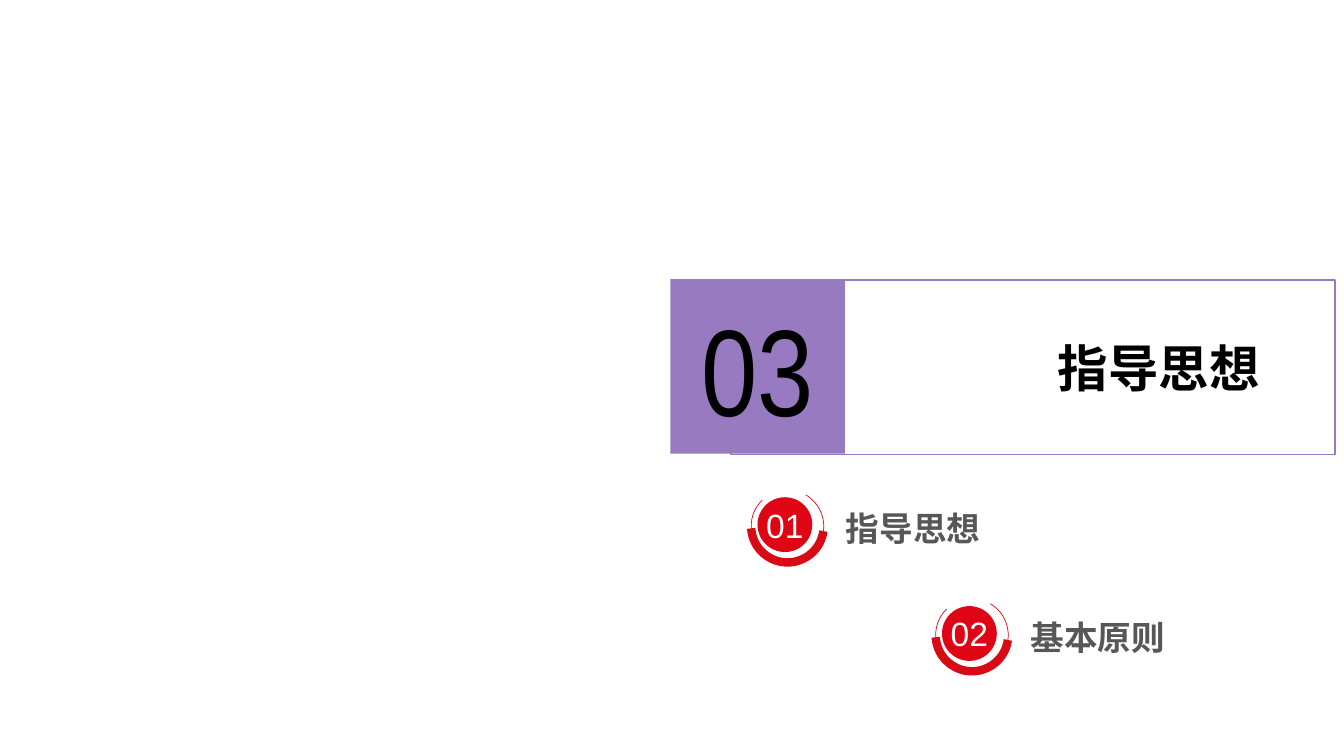
from pptx import Presentation
from pptx.dml.color import RGBColor
from pptx.enum.shapes import MSO_SHAPE as Shape
from pptx.enum.text import MSO_ANCHOR as Anchor, MSO_AUTO_SIZE as AutoSize, PP_ALIGN as Align
from pptx.oxml.ns import qn
from pptx.util import Inches, Pt
from lxml import etree


class Theme:
    purple = RGBColor(0x97, 0x7A, 0xBF)
    red = RGBColor(0xDF, 0x05, 0x15)
    ring = RGBColor(0xD8, 0x0A, 0x16)
    black = RGBColor(0, 0, 0)
    white = RGBColor(0xFF, 0xFF, 0xFF)
    label = (RGBColor(0x57, 0x56, 0x58), RGBColor(0x25, 0x22, 0x23))
    latin, narrow, chinese = "Arial", "Arial Narrow", "Noto Sans CJK SC"
    number_size, title_size, item_size = 88, 36, 24


def add_figure(parent, kind, at, fill=None, line=None, weight=1):
    figure = parent.shapes.add_shape(kind, *map(Inches, at))
    figure.shadow.inherit = False
    if fill is None:
        figure.fill.background()
    else:
        figure.fill.solid()
        figure.fill.fore_color.rgb = fill
    if line is None:
        figure.line.fill.background()
    else:
        figure.line.color.rgb = line
        figure.line.width = Pt(weight)
    return figure


def write(box, text, size, font, color, bold=False, align=Align.LEFT,
          anchor=Anchor.TOP, insets=(0.1, 0.05), wrap=True, grow=True):
    """Fill a box with one line of text; a pair of colours makes a gradient."""
    frame = box.text_frame
    frame.word_wrap = wrap
    frame.auto_size = AutoSize.SHAPE_TO_FIT_TEXT if grow else AutoSize.NONE
    frame.vertical_anchor = anchor
    frame.margin_left = frame.margin_right = Inches(insets[0])
    frame.margin_top = frame.margin_bottom = Inches(insets[1])
    para = frame.paragraphs[0]
    para.alignment = align
    span = para.add_run()
    span.text = text
    span.font.size, span.font.bold, span.font.name = Pt(size), bold, font
    if isinstance(color, RGBColor):
        span.font.color.rgb = color
    else:
        span.font.fill.gradient()
        span.font.fill.gradient_angle = 240
        for stop, shade in zip(span.font.fill.gradient_stops, color):
            stop.color.rgb = shade
    latin = span.font._element.find(qn("a:latin"))
    east_asian = etree.Element(qn("a:ea"), typeface=font)
    latin.addnext(east_asian)


deck = Presentation()
deck.slide_width, deck.slide_height = Inches(13.33), Inches(7.5)
page = deck.slides.add_slide(deck.slide_layouts[6])

# Section banner
banner = page.shapes.add_group_shape()
add_figure(banner, Shape.RECTANGLE, (6.65, 2.77, 1.73, 1.73), fill=Theme.purple)
add_figure(banner, Shape.RECTANGLE, (7.25, 2.78, 5.99, 1.73), line=Theme.purple)
number = banner.shapes.add_textbox(*map(Inches, (6.65, 2.85, 1.73, 1.58)))
write(number, "03", Theme.number_size, Theme.narrow, Theme.black,
      align=Align.CENTER, anchor=Anchor.MIDDLE)
title = banner.shapes.add_textbox(*map(Inches, (9.76, 3.29, 2.83, 1.31)))
write(title, "指导思想", Theme.title_size, Theme.chinese, Theme.black,
      bold=True, align=Align.RIGHT)

# Numbered items, each placed from the corner of its ring
items = [("01", "指导思想", 7.45, 4.86), ("02", "基本原则", 9.28, 5.94)]
ring_arcs = [(34.06, 205.29, 0.5), (74.49, 175.71, 6)]

for item_number, item_text, left, top in items:
    item = page.shapes.add_group_shape()
    label = item.shapes.add_textbox(*map(Inches, (left + 0.87, top + 0.15, 1.58, 0.47)))
    write(label, item_text, Theme.item_size, Theme.chinese, Theme.label,
          bold=True, insets=(0.07, 0.03))
    disc = add_figure(item, Shape.OVAL, (left + 0.07, top + 0.08, 0.53, 0.53),
                      fill=Theme.red, line=Theme.ring)
    write(disc, item_number, Theme.item_size, Theme.latin, Theme.white,
          align=Align.CENTER, anchor=Anchor.MIDDLE, wrap=False, grow=False)
    for start, end, weight in ring_arcs:
        arc = add_figure(item, Shape.ARC, (left, top, 0.72, 0.72),
                         line=Theme.ring, weight=weight)
        arc.adjustments[0], arc.adjustments[1] = start, end
        arc.rotation = 243.7

deck.save("out.pptx")
